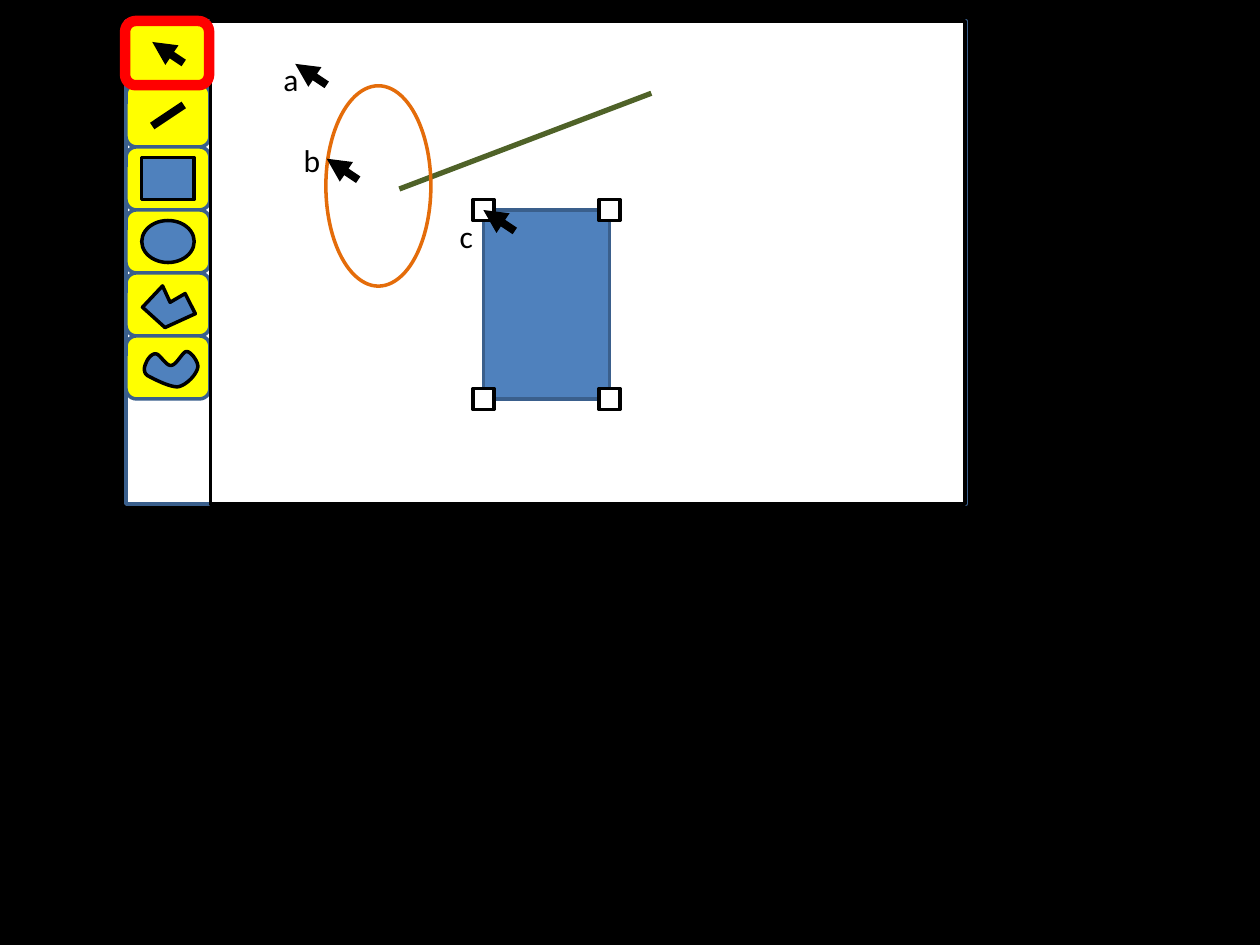
import pptx
import pptx.dml.color
import pptx.enum.shapes
import pptx.enum.text
import pptx.oxml.ns
import pptx.util
from lxml import etree

Pt = pptx.util.Pt
Shape = pptx.enum.shapes.MSO_SHAPE
COLORS = {
    "black": "000000", "white": "FFFFFF", "yellow": "FFFF00", "red": "FF0000",
    "blue": "4F81BD", "navy": "3A5F8C", "green": "4F6228", "orange": "E46C0A",
}
POLYGON = [(9.4, 19.6), (20.9, 7.4), (25.2, 16.8), (33.8, 11.8), (39.6, 23.3), (22.3, 31.2)]
BLOB_START = (12.2, 22.6)
BLOB_CURVES = [
    [(9.4, 20.4), (10.8, 16.8), (11.5, 15.4)],
    [(12.2, 13.2), (15.1, 9.6), (17.3, 10.3)],
    [(19.4, 10.3), (23, 17.5), (25.9, 16.8)],
    [(28.8, 16.8), (32.4, 8.9), (34.6, 8.9)],
    [(37.4, 8.9), (41.8, 15.4), (41, 18.2)],
    [(40.3, 21.8), (35.3, 27.6), (30.2, 29)],
    [(25.9, 29.8), (15.8, 24.6), BLOB_START],
]


def color(name):
    """Return the named colour."""
    return pptx.dml.color.RGBColor.from_string(COLORS[name])


def style(shape, fill, line, weight=2):
    """Give a shape its fill and outline, without shadow."""
    shape.shadow.inherit = False
    if fill:
        shape.fill.solid()
        shape.fill.fore_color.rgb = color(fill)
    else:
        shape.fill.background()
    shape.line.color.rgb = color(line)
    shape.line.width = Pt(weight)


def add_preset(page, kind, box, fill, line, weight=2):
    """Add a preset shape in a box of left, top, width and height."""
    shape = page.shapes.add_shape(kind, *(Pt(length) for length in box))
    style(shape, fill, line, weight)


def add_outline(page, left, top, points):
    """Add a closed icon outline from points relative to a corner."""
    corners = [(Pt(left + x), Pt(top + y)) for x, y in points]
    builder = page.shapes.build_freeform(*corners[0], scale=1.0)
    builder.add_line_segments(corners[1:], close=True)
    style(builder.convert_to_shape(), "blue", "black")


def add_line(page, start, end, line, weight, arrow=False):
    """Add a straight line, with an arrowhead at its end if asked."""
    connector = page.shapes.add_connector(
        pptx.enum.shapes.MSO_CONNECTOR.STRAIGHT, *(Pt(length) for length in start + end))
    connector.line.color.rgb = color(line)
    connector.line.width = Pt(weight)
    qn = pptx.oxml.ns.qn
    if arrow:
        etree.SubElement(connector.line._get_or_add_ln(), qn("a:tailEnd"), type="triangle")
    etree.SubElement(connector._element.spPr, qn("a:effectLst"))


def add_pointer(page, x, y):
    """Add a mouse pointer with its tip at the given point."""
    add_line(page, (x + 18, y + 12), (x, y), "black", 4.5, arrow=True)


def add_label(page, text, box):
    """Add a one-letter label."""
    shape = page.shapes.add_textbox(*(Pt(length) for length in box))
    frame = shape.text_frame
    frame.word_wrap = False
    frame.auto_size = pptx.enum.text.MSO_AUTO_SIZE.SHAPE_TO_FIT_TEXT
    span = frame.paragraphs[0].add_run()
    span.text = text
    span.font.name = "Calibri"
    span.font.size = Pt(18)
    span.font.color.rgb = color("black")


def curve_points(start, curves, steps=12):
    """Return points along a chain of cubic curves."""
    points = [start]
    for first, second, end in curves:
        for step in range(1, steps + 1):
            t = step / steps
            weights = ((1 - t) ** 3, 3 * t * (1 - t) ** 2, 3 * t * t * (1 - t), t ** 3)
            anchors = (start, first, second, end)
            points.append(tuple(
                sum(weight * anchor[axis] for weight, anchor in zip(weights, anchors))
                for axis in (0, 1)))
        start = end
    return points[:-1]


def add_toolbar(page, box):
    """Add six stacked tool buttons and their icons."""
    left, top, width, height = box
    pitch = height / 6
    tops = [top + pitch * index for index in range(6)]
    for button_top in tops:
        add_preset(page, Shape.ROUNDED_RECTANGLE, (left, button_top, width, pitch), "yellow", "navy")
    add_pointer(page, left + 15, tops[0] + 12)
    add_line(page, (left + 15, tops[1] + 24), (left + 33, tops[1] + 12), "black", 4.5)
    for kind, button_top in zip((Shape.RECTANGLE, Shape.OVAL), tops[2:4]):
        add_preset(page, kind, (left + 9, button_top + 6, 30, 24), "blue", "black")
    add_outline(page, left, tops[4], POLYGON)
    add_outline(page, left, tops[5], curve_points(BLOB_START, BLOB_CURVES))


def add_selection(page, box):
    """Add a selected rectangle with a handle on each corner."""
    left, top, width, height = box
    add_preset(page, Shape.RECTANGLE, box, "blue", "navy")
    for y in (top, top + height):
        for x in (left, left + width):
            add_preset(page, Shape.RECTANGLE, (x - 6, y - 6, 12, 12), "white", "black")
    add_pointer(page, left, top)


def add_canvas(page, box):
    """Add the drawing area with its line, ellipse, selection and pointers."""
    left, top = box[:2]
    add_preset(page, Shape.RECTANGLE, box, None, "black")
    add_line(page, (left + 252, top + 41.3), (left + 108, top + 96), "green", 3)
    add_preset(page, Shape.OVAL, (left + 66, top + 37, 60, 114.5), None, "orange")
    add_pointer(page, left + 48.5, top + 24.5)
    add_pointer(page, left + 66.5, top + 78.7)
    for text, x, y, width in (("a", 34.6, 19, 23), ("b", 46.2, 65, 24.5), ("c", 135.4, 108.2, 22.3)):
        add_label(page, text, (left + x, top + y, width, 29))
    add_selection(page, (left + 156, top + 108, 72, 108))


def main():
    """Build the slide and save it."""
    deck = pptx.Presentation()
    deck.slide_width, deck.slide_height = Pt(720), Pt(540)
    page = deck.slides.add_slide(deck.slide_layouts[6])
    page.background.fill.solid()
    page.background.fill.fore_color.rgb = color("black")
    add_preset(page, Shape.RECTANGLE, (72, 12, 480, 276), "white", "navy")
    add_toolbar(page, (72, 12, 48, 216))
    add_canvas(page, (120.2, 12, 431.3, 276))
    add_preset(page, Shape.ROUNDED_RECTANGLE, (71.5, 12, 48, 36.7), None, "red", 6)
    deck.save("out.pptx")


if __name__ == "__main__":
    main()
